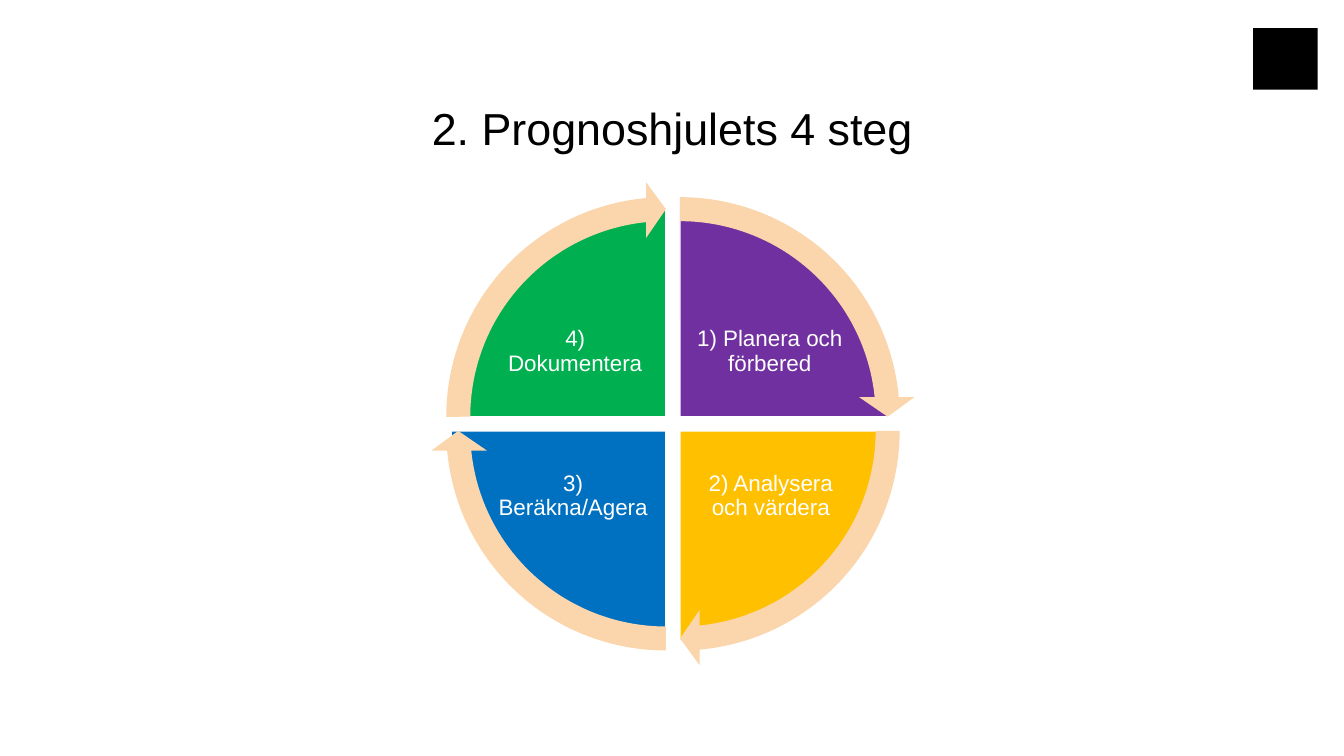
from pptx import Presentation
from pptx.dml.color import RGBColor
from pptx.enum.shapes import MSO_SHAPE as Shape
from pptx.enum.text import MSO_ANCHOR as Anchor, PP_ALIGN as Align
from pptx.util import Inches, Pt

# Angles as adjustment values: a full turn is 216, a quarter 54
TURN, QUARTER = 216, 54
HALF_GAP = 0.07

# Text, colour, side (x, y), pie width, label centre from the hub, label width
STEPS = [
    ("1) Planera och förbered", "7030A0", (1, -1), 4.16, 0.96, 1.53),
    ("2) Analysera och värdera", "FFC000", (1, 1), 4.16, 0.97, 1.54),
    ("3) Beräkna/Agera", "0070C0", (-1, 1), 4.26, 0.99, 1.57),
    ("4) Dokumentera", "00B050", (-1, -1), 4.16, 0.97, 1.53),
]


def color(hex_string):
    return RGBColor.from_string(hex_string)


def add_filled(slide, kind, box, fill, adjustments=(), outline=None):
    shape = slide.shapes.add_shape(kind, *map(Inches, box))
    shape.shadow.inherit = False
    shape.fill.solid()
    shape.fill.fore_color.rgb = color(fill)
    if outline:
        shape.line.color.rgb = color(outline)
        shape.line.width = Pt(1)
    else:
        shape.line.fill.background()
    for index, value in enumerate(adjustments):
        shape.adjustments[index] = value


def add_text(slide, box, text, size, hex_string, anchor, inset):
    frame = slide.shapes.add_textbox(*map(Inches, box)).text_frame
    frame.word_wrap = True
    frame.vertical_anchor = anchor
    frame.margin_left = frame.margin_right = Inches(inset)
    frame.margin_top = frame.margin_bottom = Inches(inset)
    paragraph = frame.paragraphs[0]
    paragraph.text = text
    paragraph.alignment = Align.CENTER
    paragraph.line_spacing = 0.9
    paragraph.font.name = "Arial"
    paragraph.font.size = Pt(size)
    paragraph.font.color.rgb = color(hex_string)


def centered(x, y, width, height):
    return x - width / 2, y - height / 2, width, height


def add_wheel(slide, left, top, size):
    hub_x, hub_y = left + size / 2, top + size / 2
    arrow_size = size - 2 * HALF_GAP
    arrows = []

    # Quarter pies with their labels
    for index, step in enumerate(STEPS):
        text, fill, (side_x, side_y), pie_width, label_x, label_width = step
        start = (3 + index) * QUARTER % TURN
        end = (start + QUARTER) % TURN
        x, y = hub_x + side_x * HALF_GAP, hub_y + side_y * HALF_GAP
        add_filled(slide, Shape.PIE, centered(x, y, pie_width, 4.16), fill,
                   (start, end), "FFFFFF")
        label = centered(hub_x + side_x * label_x, hub_y + side_y * 0.715,
                         label_width, 1.14)
        add_text(slide, label, text, 16, "FFFFFF", Anchor.MIDDLE, 0.02)
        arrows.append((centered(x, y, arrow_size, arrow_size), start))

    # Arrows around the rim, in front of all pies
    for box, start in arrows:
        tip = start + QUARTER - 3.275
        add_filled(slide, Shape.CIRCULAR_ARROW, box, "FBD5AB",
                   (0.051, 3.275, tip, start, 0.059))


def main():
    presentation = Presentation()
    presentation.slide_width = Inches(13.33)
    presentation.slide_height = Inches(7.5)
    slide = presentation.slides.add_slide(presentation.slide_layouts[6])

    # Plain corner mark
    add_filled(slide, Shape.RECTANGLE, (12.43, 0.28, 0.64, 0.61), "000000")
    # Title
    add_text(slide, (2.17, 0.3, 9, 1.24), "2. Prognoshjulets 4 steg", 32,
             "000000", Anchor.BOTTOM, 0)
    add_wheel(slide, 4.27, 1.8, 4.81)
    presentation.save("out.pptx")


if __name__ == "__main__":
    main()
